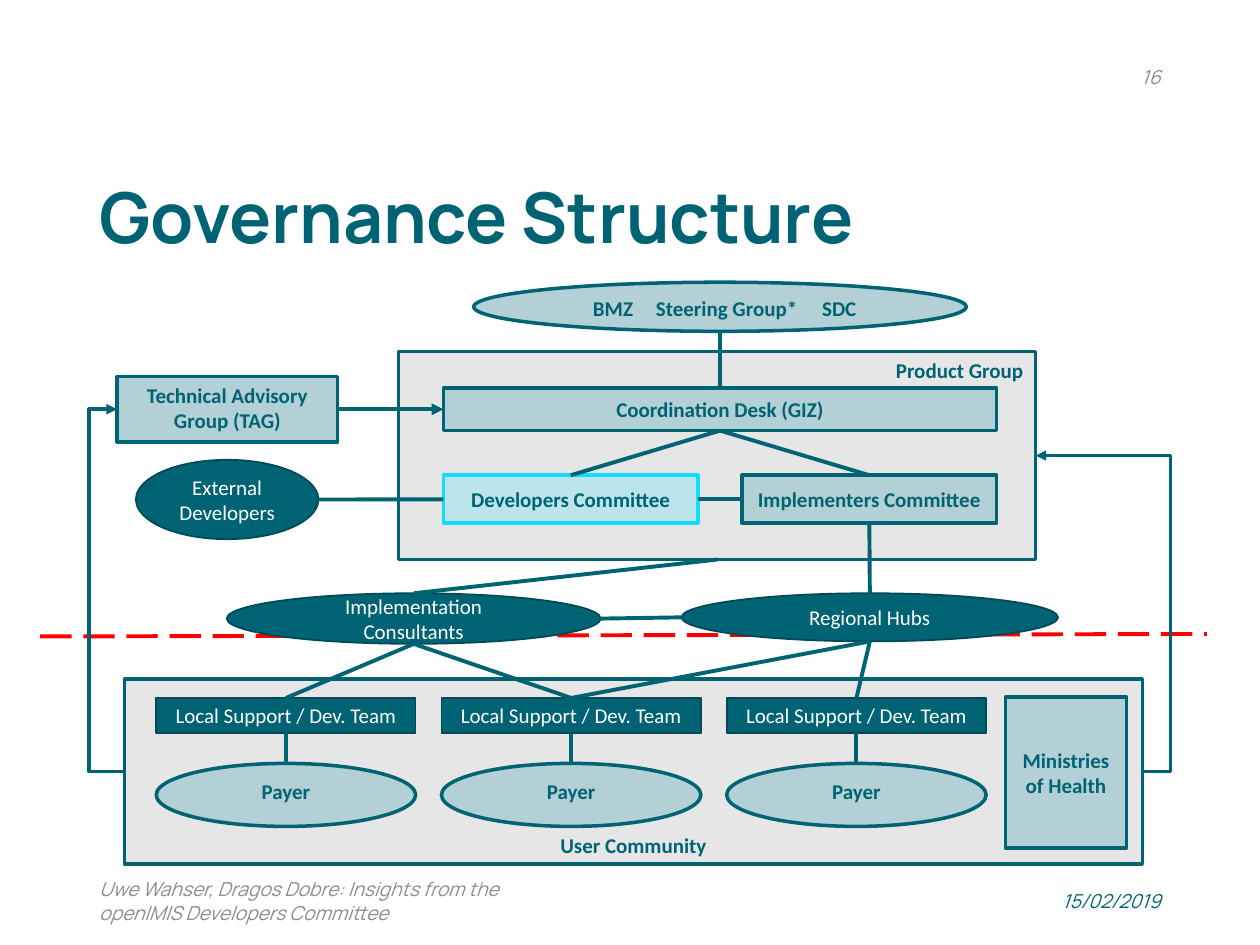
from dataclasses import dataclass

from lxml import etree
from pptx import Presentation
from pptx.dml.color import RGBColor
from pptx.enum import dml, shapes, text
from pptx.oxml import ns
from pptx.util import Cm, Pt

RECT = shapes.MSO_SHAPE.RECTANGLE
OVAL = shapes.MSO_SHAPE.OVAL
TOP, LEFT, BOTTOM, RIGHT = range(4)
ANCHOR = text.MSO_ANCHOR
ALIGN = text.PP_ALIGN


@dataclass(frozen=True)
class Look:
    fill: str
    line: str
    width: float
    color: str
    bold: bool
    alpha: int = 100


@dataclass(frozen=True)
class Theme:
    teal: str = "006374"
    grey: str = "8C8C8C"
    red: str = "FF0000"
    head_font: str = "Manrope"
    body_font: str = "Calibri"
    title_size: int = 40
    label_size: int = 12
    note_size: int = 11
    link_width: float = 2.25
    loop_width: float = 2
    area: Look = Look("E7E6E6", "006374", 2, "006374", True)
    body: Look = Look("B2D0D5", "006374", 2, "006374", True)
    actor: Look = Look("006374", "004956", 1, "FFFFFF", False)
    focus: Look = Look("13DCFF", "13DCFF", 2, "006374", True, 20)


THEME = Theme()


def rgb(value):
    return RGBColor.from_string(value)


def add_span(para, words, font, size, color, bold=False, italic=False):
    span = para.add_run()
    span.text = words
    span.font.name = font
    span.font.size = Pt(size)
    span.font.color.rgb = rgb(color)
    span.font.bold = bold
    span.font.italic = italic


def add_text(page, place, words, size, color, align=ALIGN.LEFT, bold=False, italic=False):
    box = page.shapes.add_textbox(*map(Cm, place))
    frame = box.text_frame
    frame.word_wrap = True
    frame.vertical_anchor = ANCHOR.MIDDLE
    para = frame.paragraphs[0]
    para.alignment = align
    add_span(para, words, THEME.head_font, size, color, bold, italic)
    return para


def add_node(page, kind, look, place, words, anchor=ANCHOR.MIDDLE, align=ALIGN.CENTER):
    node = page.shapes.add_shape(kind, *map(Cm, place))
    node.shadow.inherit = False
    node.fill.solid()
    node.fill.fore_color.rgb = rgb(look.fill)
    if look.alpha < 100:
        color = node.fill._xPr.find(".//" + ns.qn("a:srgbClr"))
        etree.SubElement(color, ns.qn("a:alpha"), val=str(look.alpha * 1000))
    node.line.color.rgb = rgb(look.line)
    node.line.width = Pt(look.width)
    node.text_frame.word_wrap = True
    node.text_frame.vertical_anchor = anchor
    para = node.text_frame.paragraphs[0]
    para.alignment = align
    add_span(para, words, THEME.body_font, THEME.label_size, look.color, look.bold)
    return node


def set_tabs(node, inset, stops):
    node.text_frame.margin_left = Cm(inset)
    props = node.text_frame.paragraphs[0]._p.get_or_add_pPr()
    tabs = etree.SubElement(props, ns.qn("a:tabLst"))
    for stop in stops:
        etree.SubElement(tabs, ns.qn("a:tab"), pos=str(Cm(stop)), algn="l")


def side_point(node, side):
    middle_x = node.left + node.width // 2
    middle_y = node.top + node.height // 2
    return {
        TOP: (middle_x, node.top),
        LEFT: (node.left, middle_y),
        BOTTOM: (middle_x, node.top + node.height),
        RIGHT: (node.left + node.width, middle_y),
    }[side]


def add_line(page, kind, start, end, color, width, arrow=False):
    line = page.shapes.add_connector(kind, *start, *end)
    line.line.color.rgb = rgb(color)
    line.line.width = Pt(width)
    if arrow:
        etree.SubElement(line.line._get_or_add_ln(), ns.qn("a:tailEnd"), type="triangle")
    etree.SubElement(line._element.spPr, ns.qn("a:effectLst"))
    return line


def add_link(page, source, source_side, target, target_side, arrow=False):
    line = add_line(page, shapes.MSO_CONNECTOR.STRAIGHT, side_point(source, source_side),
                    side_point(target, target_side), THEME.teal, THEME.link_width, arrow)
    if source.auto_shape_type == RECT:
        line.begin_connect(source, source_side)
    if target.auto_shape_type == RECT:
        line.end_connect(target, target_side)


def add_loop(page, source, source_side, target, target_side, bend):
    start, end = side_point(source, source_side), side_point(target, target_side)
    line = add_line(page, shapes.MSO_CONNECTOR.ELBOW, start, end,
                    THEME.teal, THEME.loop_width, arrow=True)
    share = round((Cm(bend) - start[0]) / (end[0] - start[0]) * 100000)
    guides = line._element.spPr.find(ns.qn("a:prstGeom")).get_or_add_avLst()
    etree.SubElement(guides, ns.qn("a:gd"), name="adj1", fmla=f"val {share}")


def add_texts(page):
    title = add_text(page, (1.75, 3.15, 21.89, 2.62), "Governance Structure",
                     THEME.title_size, THEME.teal, bold=True)
    title.line_spacing = 0.9
    for place, words, color, align in (
        ((17.93, 1.04, 5.72, 1.02), "16", THEME.grey, ALIGN.RIGHT),
        ((17.93, 17.65, 5.72, 1.02), "15/02/2019", THEME.teal, ALIGN.RIGHT),
        ((1.75, 17.65, 8.59, 1.02),
         "Uwe Wahser, Dragos Dobre: Insights from the openIMIS Developers Committee",
         THEME.grey, ALIGN.LEFT),
    ):
        add_text(page, place, words, THEME.note_size, color, align, italic=True)


def add_structure(page):
    product = add_node(page, RECT, THEME.area, (8.03, 7.09, 12.85, 4.19),
                       "Product Group", ANCHOR.TOP, ALIGN.RIGHT)
    community = add_node(page, RECT, THEME.area, (2.51, 13.69, 20.52, 3.73),
                         "User Community", ANCHOR.BOTTOM)
    steering = add_node(page, OVAL, THEME.body, (9.55, 5.69, 9.93, 0.99),
                        "BMZ\tSteering Group*\tSDC", ANCHOR.TOP, ALIGN.LEFT)
    set_tabs(steering, 0.95, (1.27, 4.62))
    desk = add_node(page, RECT, THEME.body, (8.94, 7.82, 11.15, 0.86), "Coordination Desk (GIZ)")
    advisory = add_node(page, RECT, THEME.body, (2.36, 7.59, 4.45, 1.32),
                        "Technical Advisory Group (TAG)", ANCHOR.TOP)
    external = add_node(page, OVAL, THEME.actor, (2.74, 9.27, 3.68, 1.6), "External Developers")
    developers = add_node(page, RECT, THEME.focus, (8.94, 9.58, 5.13, 0.97),
                          "Developers Committee")
    implementers = add_node(page, RECT, THEME.body, (14.96, 9.58, 5.13, 0.97),
                            "Implementers Committee")
    consultants = add_node(page, OVAL, THEME.actor, (4.57, 11.96, 7.54, 1.02),
                           "Implementation Consultants")
    hubs = add_node(page, OVAL, THEME.actor, (13.74, 11.96, 7.59, 0.97), "Regional Hubs")
    add_node(page, RECT, THEME.body, (20.27, 14.05, 2.44, 3.05), "Ministries of Health")

    teams = []
    for column in range(3):
        left = 3.15 + 5.75 * column
        team = add_node(page, RECT, THEME.actor, (left, 14.07, 5.23, 0.71),
                        "Local Support / Dev. Team")
        payer = add_node(page, OVAL, THEME.body, (left, 15.39, 5.23, 1.27), "Payer", ANCHOR.TOP)
        add_link(page, payer, TOP, team, BOTTOM)
        teams.append(team)

    add_link(page, steering, BOTTOM, desk, TOP)
    add_link(page, advisory, RIGHT, desk, LEFT, arrow=True)
    for committee in (developers, implementers):
        add_link(page, desk, BOTTOM, committee, TOP)
    add_link(page, developers, LEFT, external, RIGHT)
    add_link(page, developers, RIGHT, implementers, LEFT)
    add_link(page, consultants, TOP, product, BOTTOM)
    add_link(page, hubs, TOP, implementers, BOTTOM)
    add_link(page, consultants, RIGHT, hubs, LEFT)
    for partner, served in ((consultants, teams[:2]), (hubs, teams[1:])):
        for team in served:
            add_link(page, team, TOP, partner, BOTTOM)
    add_loop(page, community, LEFT, advisory, LEFT, 1.8)
    add_loop(page, community, RIGHT, product, RIGHT, 23.6)


def main():
    deck = Presentation()
    deck.slide_width, deck.slide_height = Cm(25.4), Cm(19.05)
    page = deck.slides.add_slide(deck.slide_layouts[6])
    border = add_line(page, shapes.MSO_CONNECTOR.STRAIGHT, (Cm(0.81), Cm(12.83)),
                      (Cm(24.33), Cm(12.78)), THEME.red, THEME.link_width)
    border.line.dash_style = dml.MSO_LINE.LONG_DASH
    add_texts(page)
    add_structure(page)
    deck.save("out.pptx")


if __name__ == "__main__":
    main()
